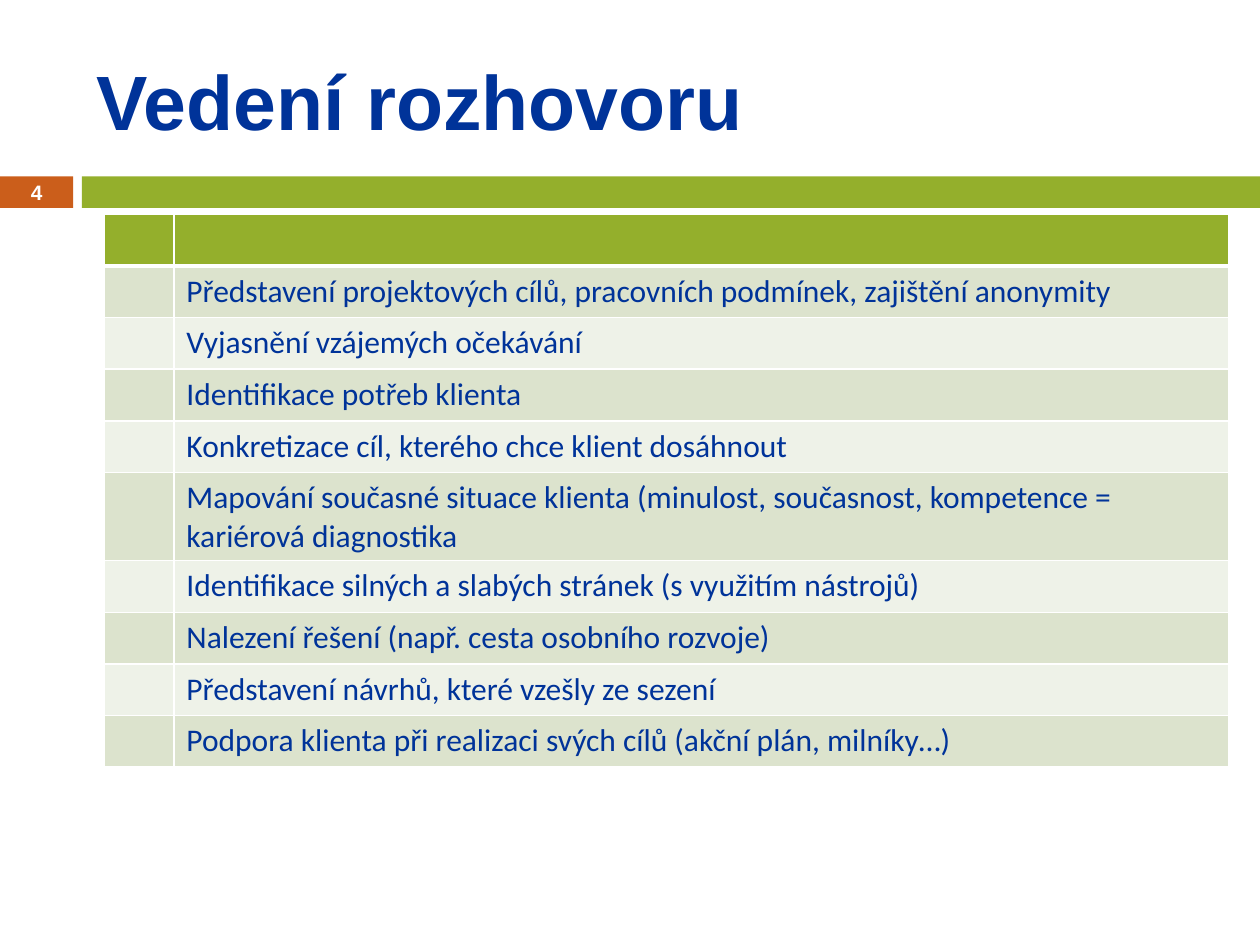
from dataclasses import dataclass

from lxml import etree
from pptx import Presentation
from pptx.dml.color import RGBColor
from pptx.enum.shapes import MSO_SHAPE
from pptx.enum.text import MSO_ANCHOR, PP_ALIGN
from pptx.oxml.ns import qn
from pptx.util import Inches, Pt

RECT = MSO_SHAPE.RECTANGLE
MIDDLE = MSO_ANCHOR.MIDDLE
LEFT, CENTER = PP_ALIGN.LEFT, PP_ALIGN.CENTER
WIDE, HIGH = 10, 7.5
ROW = 0.41
COLS = (0.55, 8.37)
COLORS = {
    "ink": "003399",
    "white": "FFFFFF",
    "green": "94AF2C",
    "orange": "CB5E1B",
    "dark": "DCE3CD",
    "light": "EEF2E8",
}
STEPS = (
    "Představení projektových cílů, pracovních podmínek, zajištění anonymity",
    "Vyjasnění vzájemých očekávání",
    "Identifikace potřeb klienta",
    "Konkretizace cíl, kterého chce klient dosáhnout",
    "Mapování současné situace klienta (minulost, současnost, kompetence = kariérová diagnostika",
    "Identifikace silných a slabých stránek (s využitím nástrojů)",
    "Nalezení řešení (např. cesta osobního rozvoje)",
    "Představení návrhů, které vzešly ze sezení",
    "Podpora klienta při realizaci svých cílů (akční plán, milníky…)",
)
TALL = 5


@dataclass
class Box:
    left: float
    top: float
    width: float
    height: float

    def place(self) -> tuple:
        return tuple(Inches(v) for v in (self.left, self.top, self.width, self.height))


@dataclass
class Bar:
    box: Box
    color: str


@dataclass
class Label:
    box: Box
    text: str
    size: float
    color: str
    align: PP_ALIGN
    inset: float


BARS = (
    Bar(Box(0, 1.4, 0.58, 0.25), "orange"),
    Bar(Box(0.65, 1.4, WIDE - 0.65, 0.25), "green"),
)
LABELS = (
    Label(Box(0.67, 0.25, 8.92, 1.08), "Vedení rozhovoru", 44, "ink", LEFT, 0.1),
    Label(Box(0, 1.39, 0.58, 0.27), "4", 11.9, "white", CENTER, 0),
)


def tint(name: str) -> RGBColor:
    return RGBColor.from_string(COLORS[name])


def write(para, text: str, face: str, size: float, color: str, bold: bool) -> None:
    run = para.add_run()
    run.text = text
    run.font.name = face
    run.font.size = Pt(size)
    run.font.bold = bold
    run.font.color.rgb = tint(color)


def draw_bar(slide, bar: Bar) -> None:
    shape = slide.shapes.add_shape(RECT, *bar.box.place())
    shape.shadow.inherit = False
    shape.fill.solid()
    shape.fill.fore_color.rgb = tint(bar.color)
    shape.line.fill.background()


def draw_label(slide, label: Label) -> None:
    frame = slide.shapes.add_textbox(*label.box.place()).text_frame
    frame.word_wrap = True
    frame.vertical_anchor = MIDDLE
    frame.margin_left = frame.margin_right = Inches(label.inset)
    frame.margin_top = frame.margin_bottom = 0
    para = frame.paragraphs[0]
    para.alignment = label.align
    write(para, label.text, "Arial", label.size, label.color, True)


def edge(cell, side: str, width: float) -> None:
    props = cell._tc.get_or_add_tcPr()
    line = etree.SubElement(props, qn(f"a:ln{side}"), w=str(Pt(width)))
    fill = etree.SubElement(line, qn("a:solidFill"))
    etree.SubElement(fill, qn("a:srgbClr"), val=COLORS["white"])


def draw_cell(cell, row: int, text: str) -> None:
    for side in "LRTB":
        heavy = (row, side) in ((0, "B"), (1, "T"))
        edge(cell, side, 3 if heavy else 1)
    color = "green" if row == 0 else ("light", "dark")[row % 2]
    cell.fill.solid()
    cell.fill.fore_color.rgb = tint(color)
    if text:
        write(cell.text_frame.paragraphs[0], text, "Calibri", 18, "ink", False)


def draw_table(slide) -> None:
    texts = ("", *STEPS)
    box = Box(0.83, 1.7, sum(COLS), ROW * len(texts))
    table = slide.shapes.add_table(len(texts), len(COLS), *box.place()).table
    for col, width in zip(table.columns, COLS):
        col.width = Inches(width)
    for row, text in enumerate(texts):
        table.rows[row].height = Inches(0.7 if row == TALL else ROW)
        draw_cell(table.cell(row, 0), row, "")
        draw_cell(table.cell(row, 1), row, text)


def main() -> None:
    deck = Presentation()
    deck.slide_width, deck.slide_height = Inches(WIDE), Inches(HIGH)
    slide = deck.slides.add_slide(deck.slide_layouts[6])
    for bar in BARS:
        draw_bar(slide, bar)
    for label in LABELS:
        draw_label(slide, label)
    draw_table(slide)
    deck.save("out.pptx")


if __name__ == "__main__":
    main()
